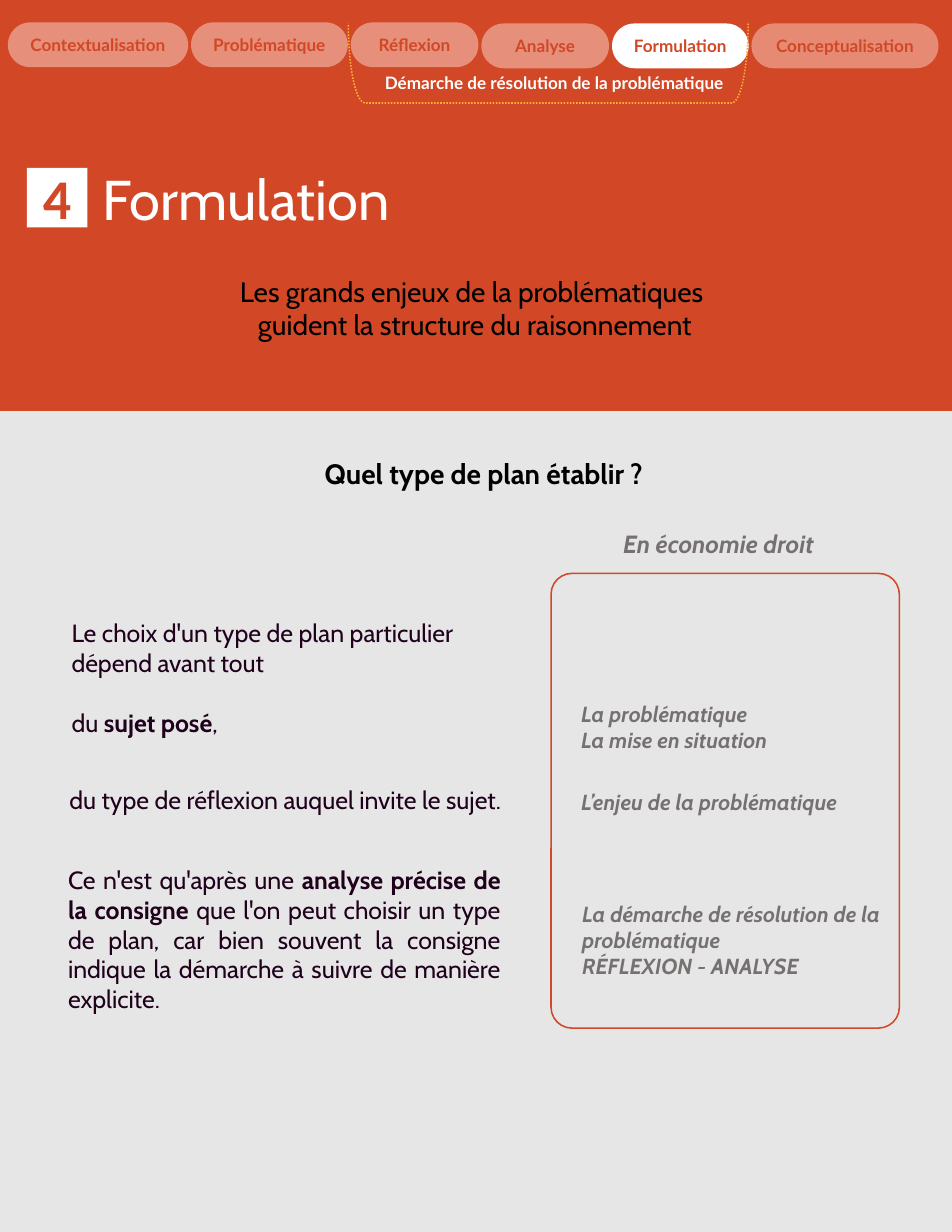
from dataclasses import dataclass

from pptx import Presentation
from pptx.dml.color import RGBColor
from pptx.enum.dml import MSO_LINE_DASH_STYLE as Dash
from pptx.enum.shapes import MSO_SHAPE as Shape
from pptx.enum.text import MSO_ANCHOR as Anchor, PP_ALIGN as Align
from pptx.util import Inches, Pt


@dataclass(frozen=True)
class Theme:
    orange: str = "D24726"
    salmon: str = "E68F7A"
    coral: str = "E68A74"
    white: str = "FFFFFF"
    pale: str = "E7E6E6"
    amber: str = "F9B233"
    black: str = "000000"
    plum: str = "1F011C"
    grey: str = "767171"
    body_font: str = "Cabin"
    tab_font: str = "Lato"
    number_font: str = "Calibri"
    title: int = 36
    heading: int = 18
    body: int = 16
    answer: int = 14
    tab: int = 11
    line_gap: float = 19.3


theme = Theme()
WIDTH, HEIGHT = 8.5, 11
COLUMNS, ROWS = 85, 110
PANEL_TOP = 36.7
TAB_LEFT, TAB_GAP, TAB_HEIGHT = 0.7, 0.26, 4

steps = [
    ("Contextualisation", 16.1, 2, theme.salmon),
    ("Problématique", 14, 2, theme.salmon),
    ("Réflexion", 11.4, 2, theme.salmon),
    ("Analyse", 11.4, 2.1, theme.salmon),
    ("Formulation", 12.2, 2.1, theme.white),
    ("Conceptualisation", 16.7, 2.1, theme.coral),
]

styles = {
    "title": dict(size=theme.title, color=theme.white),
    "number": dict(font=theme.number_font, size=theme.title, color=theme.orange,
                   bold=True, align=Align.CENTER),
    "tab": dict(font=theme.tab_font, size=theme.tab, color=theme.orange,
                bold=True, align=Align.CENTER),
    "approach": dict(font=theme.tab_font, size=theme.tab, color=theme.white,
                     bold=True, align=Align.CENTER),
    "stakes": dict(size=theme.heading, color=theme.black, align=Align.CENTER),
    "question": dict(size=theme.heading, color=theme.black, bold=True, align=Align.CENTER),
    "subject": dict(size=theme.body, color=theme.grey, bold=True, italic=True,
                    align=Align.CENTER),
    "answer": dict(size=theme.answer, color=theme.grey, bold=True, italic=True),
    "advice": dict(size=theme.body, color=theme.plum, align=Align.JUSTIFY),
}

passages = [
    ("title", (8.2, 14.2, 65.8, 7.1), ["Formulation"]),
    ("number", (2, 14.1, 6.2, 7.1), ["4"]),
    ("approach", (30.8, 6, 37.4, 2.9), ["Démarche de résolution de la problématique"]),
    ("stakes", (0, 24, 84.8, 7.1),
     ["Les grands enjeux de la problématiques ", "guident la structure du raisonnement"]),
    ("question", (25.7, 40.3, 35, 4), ["Quel type de plan établir ?"]),
    ("subject", (51.7, 46.7, 24.9, 3.7), ["En économie droit"]),
    ("answer", (50.9, 62.1, 24.9, 5.7), ["La problématique", "La mise en situation"]),
    ("answer", (50.9, 69.9, 28.3, 3.4), ["L’enjeu de la problématique"]),
    ("answer", (51, 79.9, 29.2, 8.1),
     ["La démarche de résolution de la problématique", "RÉFLEXION - ANALYSE"]),
    ("advice", (5.4, 54.7, 42.5, 7.4),
     ["Le choix d'un type de plan particulier ", "dépend avant tout "]),
    ("advice", (5.4, 62.7, 42.5, 3.8), [["du ", "sujet posé", ", "]]),
    ("advice", (5.2, 69.6, 42.5, 6.4), ["du type de réflexion auquel invite le sujet. "]),
    ("advice", (5.1, 76.7, 40.6, 17.2),
     [["Ce n'est qu'après une ", "analyse précise de la consigne",
       " que l'on peut choisir un type de plan, car bien souvent la consigne "
       "indique la démarche à suivre de manière explicite."]]),
]


def place(left, top, width, height):
    column, row = WIDTH / COLUMNS, HEIGHT / ROWS
    return [Inches(n) for n in (left * column, top * row, width * column, height * row)]


def add_shape(slide, kind, box, fill=None, line=None, corner=None):
    shape = slide.shapes.add_shape(kind, *place(*box))
    shape.shadow.inherit = False
    if corner is not None:
        shape.adjustments[0] = corner
    if fill:
        shape.fill.solid()
        shape.fill.fore_color.rgb = RGBColor.from_string(fill)
    else:
        shape.fill.background()
    if line:
        shape.line.color.rgb = RGBColor.from_string(line)
        shape.line.width = Pt(1)
    else:
        shape.line.fill.background()
    return shape


def write(frame, lines, size, color, font=theme.body_font, bold=False, italic=False,
          align=Align.LEFT):
    frame.word_wrap = True
    for index, line in enumerate(lines):
        paragraph = frame.add_paragraph() if index else frame.paragraphs[0]
        paragraph.alignment = align
        paragraph.font.name = font
        paragraph.font.size = Pt(size)
        paragraph.font.bold = bold
        paragraph.font.italic = italic
        paragraph.font.color.rgb = RGBColor.from_string(color)
        parts = [line] if isinstance(line, str) else line
        for position, words in enumerate(parts):
            run = paragraph.add_run()
            run.text = words
            if position % 2:
                run.font.bold = True


def main():
    deck = Presentation()
    deck.slide_width, deck.slide_height = Inches(WIDTH), Inches(HEIGHT)
    slide = deck.slides.add_slide(deck.slide_layouts[6])
    slide.background.fill.solid()
    slide.background.fill.fore_color.rgb = RGBColor.from_string(theme.orange)

    add_shape(slide, Shape.RECTANGLE, (0, PANEL_TOP, COLUMNS, ROWS - PANEL_TOP), theme.pale)
    add_shape(slide, Shape.RECTANGLE, (2.4, 15, 5.4, 5.3), theme.white)

    left = TAB_LEFT
    for step, width, top, fill in steps:
        tab = add_shape(slide, Shape.ROUNDED_RECTANGLE, (left, top, width, TAB_HEIGHT),
                        fill, corner=0.5)
        tab.text_frame.vertical_anchor = Anchor.MIDDLE
        write(tab.text_frame, [step], **styles["tab"])
        left += width + TAB_GAP

    bracket = add_shape(slide, Shape.RIGHT_BRACKET, (45.4, -12.2, 7.1, 35.7),
                        line=theme.amber, corner=0.21)
    bracket.rotation = 90
    bracket.line.dash_style = Dash.ROUND_DOT
    add_shape(slide, Shape.ROUNDED_RECTANGLE, (49.2, 51.2, 31.1, 40.6),
              line=theme.orange, corner=0.06)

    for style, box, lines in passages:
        frame = slide.shapes.add_textbox(*place(*box)).text_frame
        write(frame, lines, **styles[style])

    deck.save("out.pptx")


if __name__ == "__main__":
    main()
